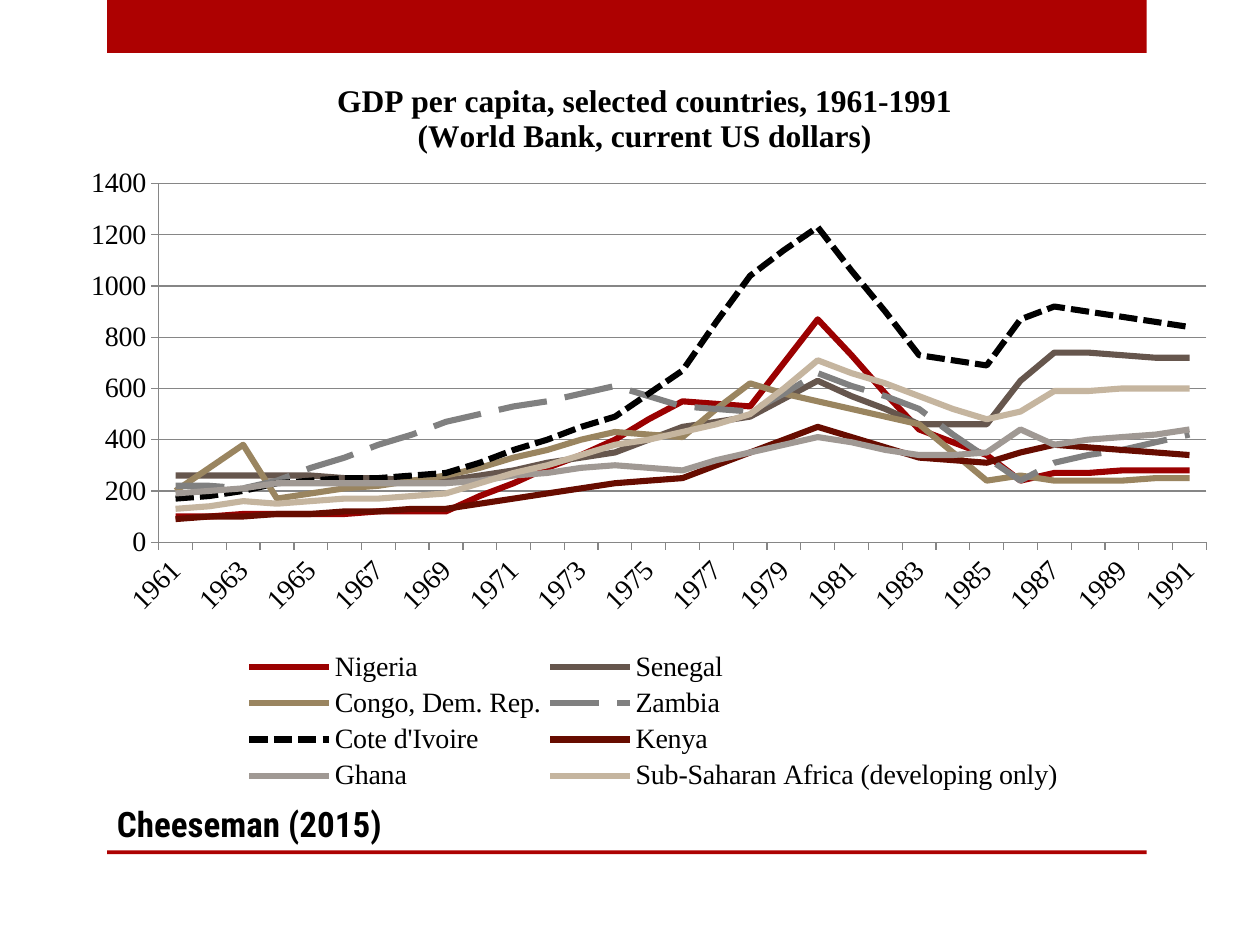
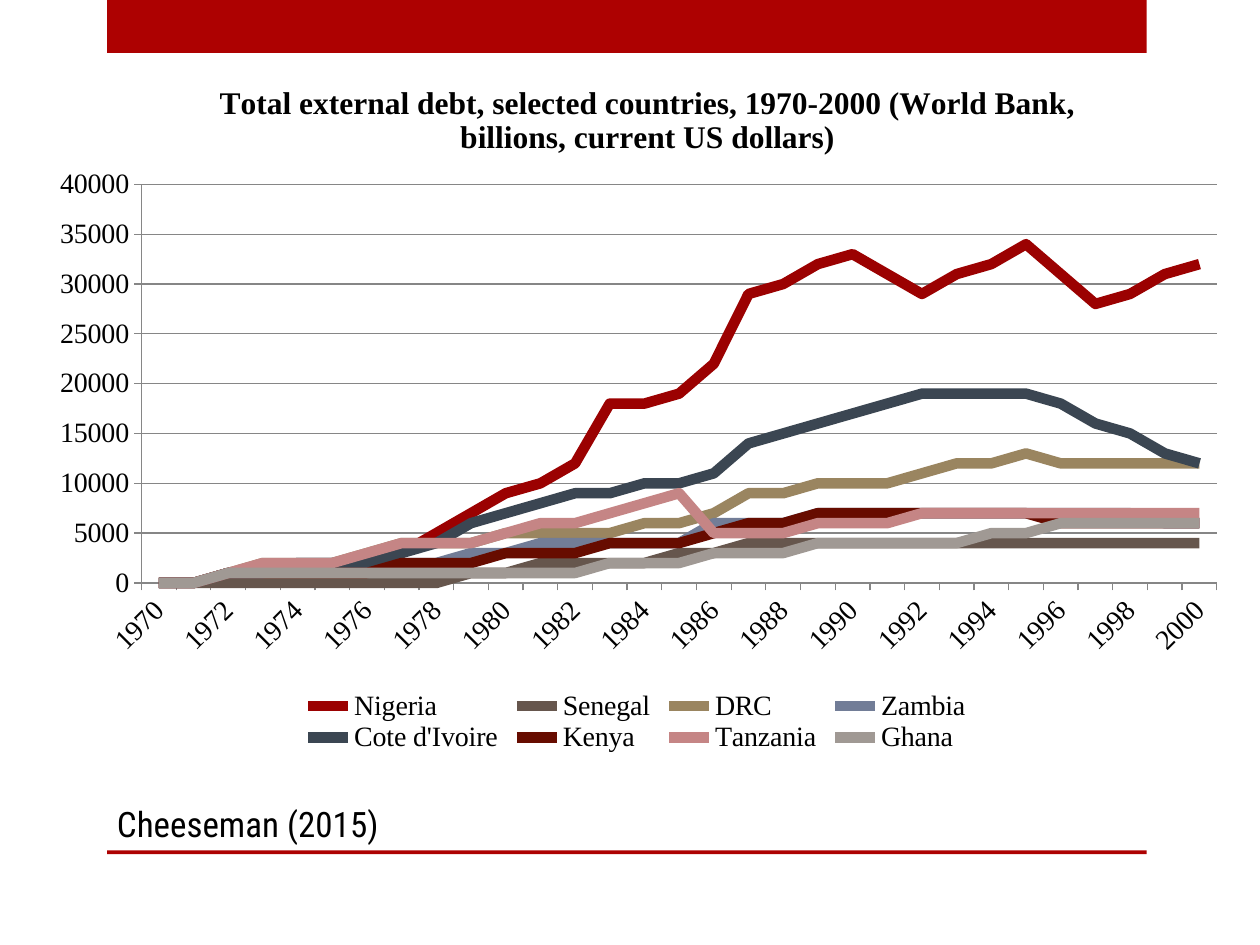
from lxml import etree
from pptx import Presentation
from pptx import util as u
from pptx.chart.data import CategoryChartData
from pptx.dml.color import RGBColor
from pptx.enum import chart as ch, dml, shapes, text

COLORS = {
    "band": "AD0101", "black": "000000", "grid": "868686",
    "red": "9B0101", "brown": "66564D", "tan": "9A8560", "gray": "808080",
    "blue": "727D97", "slate": "3B4652", "maroon": "670C00",
    "rose": "C58585", "stone": "A09994", "sand": "C5B59F",
}
SERIF, SANS = "Times New Roman", "Roboto Condensed"
C_NS = "http://schemas.openxmlformats.org/drawingml/2006/chart"
DASHES = {"gray": dml.MSO_LINE.LONG_DASH, "black": dml.MSO_LINE.SQUARE_DOT}

# Values at the turning years, GDP in tens of dollars and debt in thousands;
# the years between them are interpolated.
GDP_YEARS = [1961, 1963, 1964, 1969, 1974, 1976, 1978, 1980, 1983, 1985, 1986, 1987, 1991]
GDP_SERIES = [
    ("Nigeria", "red", [10, 11, 11, 12, 40, 55, 53, 87, 44, 34, 24, 27, 28]),
    ("Senegal", "brown", [26, 26, 26, 24, 35, 45, 49, 63, 46, 46, 63, 74, 72]),
    ("Congo, Dem. Rep.", "tan", [20, 38, 17, 26, 43, 41, 62, 55, 46, 24, 26, 24, 25]),
    ("Zambia", "gray", [22, 21, 24, 47, 61, 53, 51, 66, 52, 33, 24, 31, 42]),
    ("Cote d'Ivoire", "black", [17, 20, 23, 27, 49, 67, 104, 123, 73, 69, 87, 92, 84]),
    ("Kenya", "maroon", [9, 10, 11, 13, 23, 25, 35, 45, 33, 31, 35, 38, 34]),
    ("Ghana", "stone", [19, 21, 23, 23, 30, 28, 35, 41, 34, 35, 44, 38, 44]),
    ("Sub-Saharan Africa (developing only)", "sand",
     [13, 16, 15, 19, 38, 43, 50, 71, 57, 48, 51, 59, 60]),
]
DEBT_YEARS = [1970, 1971, 1972, 1976, 1980, 1982, 1983, 1985, 1986, 1987, 1990, 1992,
              1995, 1997, 2000]
DEBT_SERIES = [  # every country starts with zero in 1970 and 1971
    ("Nigeria", "red", [1, 1, 9, 12, 18, 19, 22, 29, 33, 29, 34, 28, 32]),
    ("Senegal", "brown", [0, 0, 1, 2, 2, 3, 3, 4, 4, 4, 4, 4, 4]),
    ("DRC", "tan", [1, 3, 5, 5, 5, 6, 7, 9, 10, 11, 13, 12, 12]),
    ("Zambia", "blue", [1, 2, 3, 4, 4, 4, 6, 6, 7, 7, 7, 7, 6]),
    ("Cote d'Ivoire", "slate", [1, 2, 7, 9, 9, 10, 11, 14, 17, 19, 19, 16, 12]),
    ("Kenya", "maroon", [1, 1, 3, 3, 4, 4, 5, 6, 7, 7, 7, 6, 6]),
    ("Tanzania", "rose", [1, 3, 5, 6, 7, 9, 5, 5, 6, 7, 7, 7, 7]),
    ("Ghana", "stone", [1, 1, 1, 1, 2, 2, 3, 3, 4, 4, 5, 6, 6]),
]


def rgb(name):
    return RGBColor.from_string(COLORS[name])


def box(at):
    return [u.Inches(v) for v in at]


def format_font(font, size, name=SERIF, bold=False):
    font.size, font.name, font.bold = u.Pt(size), name, bold
    font.color.rgb = rgb("black")


def add_band(s, top, height):
    sp = s.shapes.add_shape(shapes.MSO_SHAPE.RECTANGLE, *box((0.85, top, 8.25, height)))
    sp.shadow.inherit = False
    sp.fill.solid()
    sp.fill.fore_color.rgb = rgb("band")
    sp.line.fill.background()


def add_source(s, words, bold):
    tf = s.shapes.add_textbox(*box((0.83, 5, 7.42, 1.75))).text_frame
    tf.word_wrap = True
    tf.vertical_anchor = text.MSO_ANCHOR.BOTTOM
    r = tf.paragraphs[0].add_run()
    r.text = words
    format_font(r.font, 20, SANS, bold)


def yearly(years, vals):
    """Interpolate between the given years to one whole value a year."""
    vals = [0] * (len(years) - len(vals)) + vals
    result = vals[:1]
    for y0, y1, v0, v1 in zip(years, years[1:], vals, vals[1:]):
        result += [round(v0 + (v1 - v0) * (y - y0) / (y1 - y0))
                   for y in range(y0 + 1, y1 + 1)]
    return result


def place(chart, part, index, at):
    """Give a chart part a manual layout, in fractions of the chart area."""
    parent = chart.element.xpath("c:chart/c:" + part)[0]
    for old in parent.xpath("c:layout"):
        parent.remove(old)
    layout = etree.Element(f"{{{C_NS}}}layout")
    manual = etree.SubElement(layout, f"{{{C_NS}}}manualLayout")
    settings = {"xMode": "edge", "yMode": "edge", **dict(zip("xywh", at))}
    if part == "plotArea":
        settings = {"layoutTarget": "inner", **settings}
    for tag, val in settings.items():
        etree.SubElement(manual, f"{{{C_NS}}}{tag}").set("val", str(val))
    parent.insert(index, layout)


def format_grid_line(line):
    line.color.rgb = rgb("grid")
    line.width = u.Pt(0.75)


def format_axis(axis):
    axis.major_tick_mark = ch.XL_TICK_MARK.OUTSIDE
    axis.minor_tick_mark = ch.XL_TICK_MARK.NONE
    format_grid_line(axis.format.line)
    format_font(axis.tick_labels.font, 16)


def format_axes(chart, top, step):
    years, values = chart.category_axis, chart.value_axis
    format_axis(years)
    format_axis(values)
    years.has_major_gridlines = False
    body = chart.element.xpath(".//c:catAx/c:txPr/a:bodyPr")[0]
    body.set("rot", "-2700000")
    body.set("vert", "horz")
    skip = etree.Element(f"{{{C_NS}}}tickLblSkip")
    skip.set("val", "2")
    chart.element.xpath(".//c:catAx/c:noMultiLvlLbl")[0].addprevious(skip)
    values.minimum_scale, values.maximum_scale, values.major_unit = 0, top, step
    values.tick_labels.number_format = "General"
    values.tick_labels.number_format_is_linked = False
    values.has_major_gridlines = True
    format_grid_line(values.major_gridlines.format.line)


def add_title(chart, lines):
    tf = chart.chart_title.text_frame
    for i, words in enumerate(lines):
        p = tf.paragraphs[0] if i == 0 else tf.add_paragraph()
        r = p.add_run()
        r.text = words
        format_font(r.font, 18, bold=True)


def add_line_chart(s, at, title, years, series, scale, top, step, width,
                   title_at, plot_at, legend_at):
    data = CategoryChartData()
    data.categories = [str(y) for y in range(years[0], years[-1] + 1)]
    for name, _, vals in series:
        data.add_series(name, [v * scale for v in yearly(years, vals)])
    chart = s.shapes.add_chart(ch.XL_CHART_TYPE.LINE, *box(at), data).chart
    format_font(chart.font, 10)
    add_title(chart, title)
    format_axes(chart, top, step)
    chart.plots[0].vary_by_categories = False
    for ser, (_, color, _) in zip(chart.plots[0].series, series):
        ser.smooth = False
        ser.marker.style = ch.XL_MARKER_STYLE.NONE
        ser.format.line.color.rgb = rgb(color)
        ser.format.line.width = u.Pt(width)
        if color in DASHES:
            ser.format.line.dash_style = DASHES[color]
    chart.has_legend = True
    chart.legend.position = ch.XL_LEGEND_POSITION.BOTTOM
    chart.legend.include_in_layout = False
    format_font(chart.legend.font, 16)
    place(chart, "title", 1, title_at)
    place(chart, "plotArea", 0, plot_at)
    place(chart, "legend", 1, legend_at)


def add_slide(prs, source_bold, **chart_options):
    s = prs.slides.add_slide(prs.slide_layouts[6])
    add_band(s, 0, 0.42)
    add_band(s, 6.75, 0.03)
    add_source(s, "Cheeseman (2015)", source_bold)
    add_line_chart(s, **chart_options)


def main():
    prs = Presentation()
    prs.slide_width, prs.slide_height = u.Inches(10), u.Inches(7.5)
    add_slide(
        prs, True, at=(0.52, 0.39, 9.24, 5.93),
        title=["GDP per capita, selected countries, 1961-1991",
               "(World Bank, current US dollars)"],
        years=GDP_YEARS, series=GDP_SERIES, scale=10, top=1400, step=200, width=3.5,
        title_at=(0.23, 0.04), plot_at=(0.08, 0.18, 0.9, 0.48),
        legend_at=(0.15, 0.8, 0.71, 0.2))
    add_slide(
        prs, False, at=(0.26, 0.39, 9.59, 5.65),
        title=["Total external debt, selected countries, 1970-2000 "
               "(World Bank, billions, current US dollars)"],
        years=DEBT_YEARS, series=DEBT_SERIES, scale=1000, top=40000, step=5000, width=6,
        title_at=(0.15, 0.04), plot_at=(0.09, 0.19, 0.89, 0.56),
        legend_at=(0.22, 0.9, 0.56, 0.09))
    prs.save("out.pptx")


if __name__ == "__main__":
    main()
